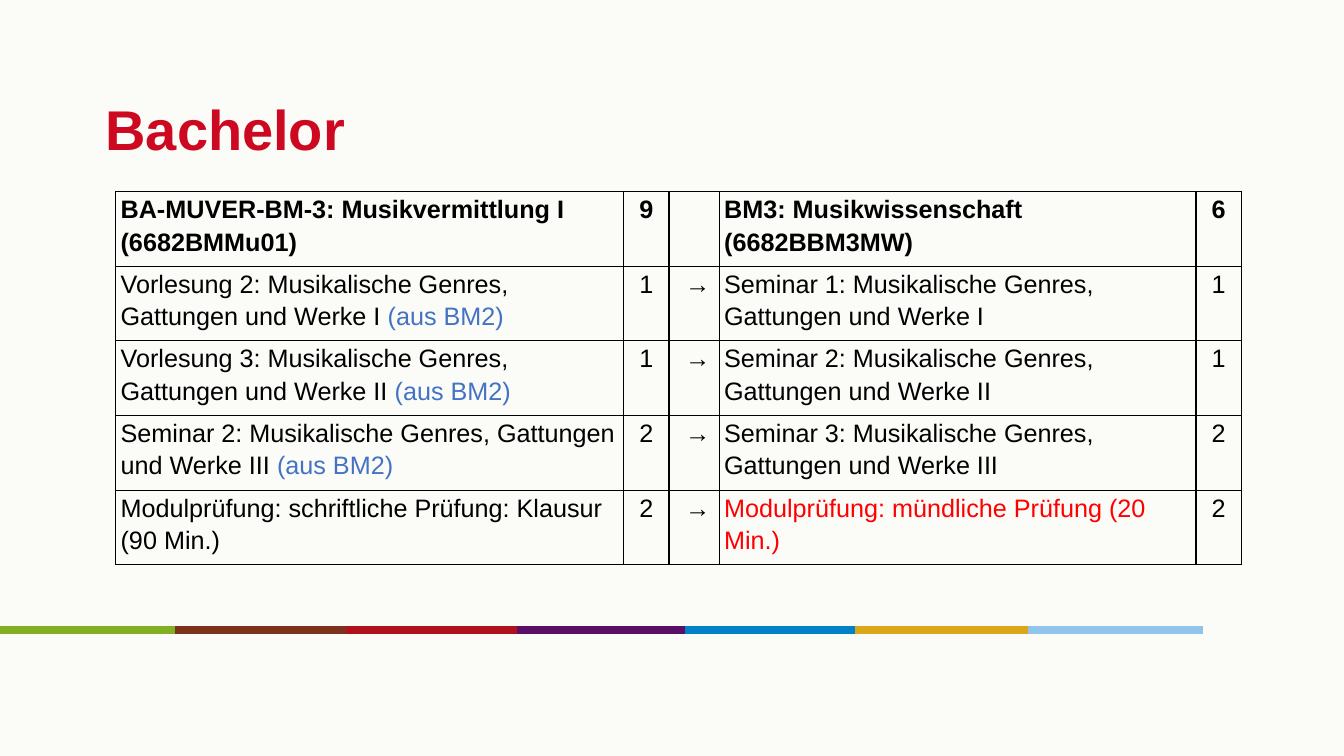
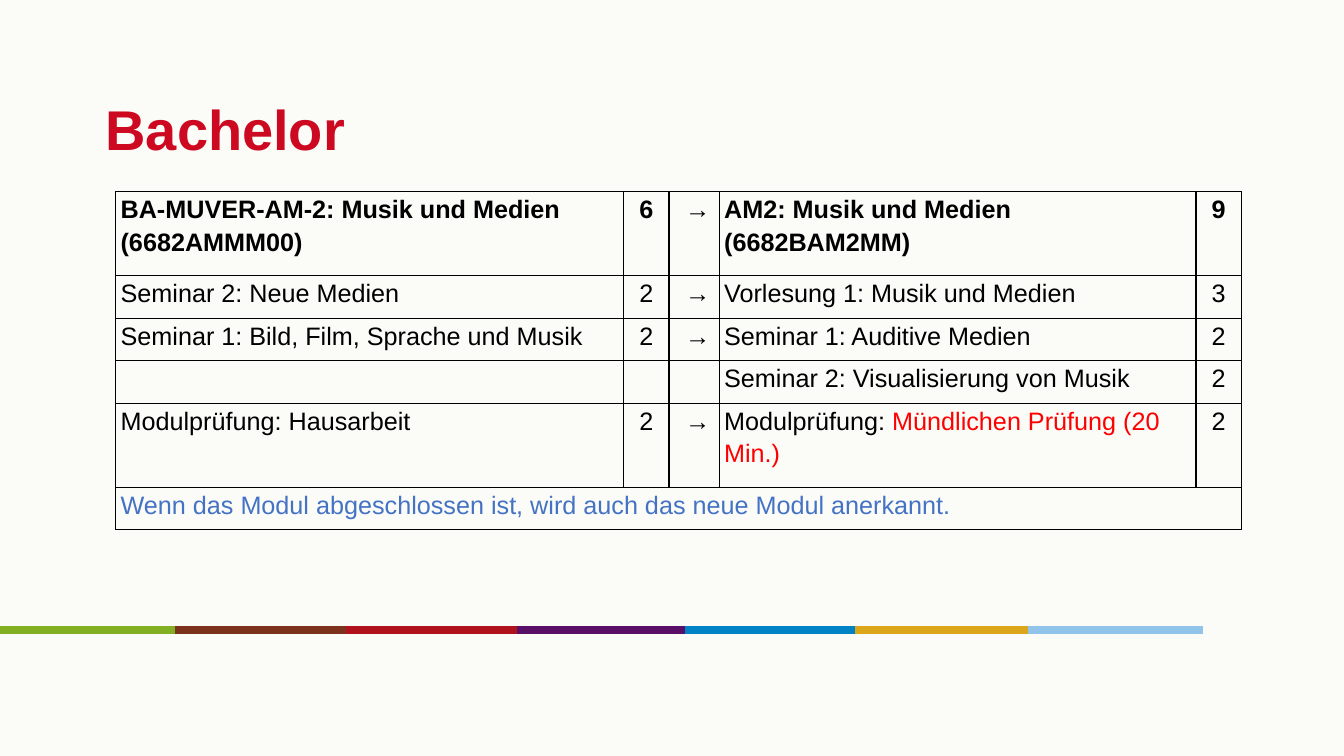
from dataclasses import dataclass
from typing import NamedTuple

from lxml import etree
from pptx import Presentation
from pptx.dml.color import RGBColor
from pptx.enum.shapes import MSO_CONNECTOR
from pptx.enum.text import MSO_ANCHOR, MSO_AUTO_SIZE, PP_ALIGN
from pptx.oxml.ns import qn
from pptx.util import Cm, Pt

LEFT, CENTER = PP_ALIGN.LEFT, PP_ALIGN.CENTER
MIDDLE = MSO_ANCHOR.MIDDLE
NO_FIT = MSO_AUTO_SIZE.NONE
STRAIGHT = MSO_CONNECTOR.STRAIGHT


@dataclass(frozen=True)
class Theme:
    font: str = "Arial"
    paper: str = "FBFCF8"
    title: str = "CD0921"
    ink: str = "000000"
    note: str = "4472C4"
    alert: str = "FF0000"
    title_size: float = 40
    body_size: float = 18
    band_size: float = 5.5
    rule_size: float = 1


THEME = Theme()


class Band(NamedTuple):
    left: float
    color: str


class Part(NamedTuple):
    text: str
    color: str = THEME.ink


class Row(NamedTuple):
    height: float
    old: tuple = ()
    old_points: str = ""
    arrow: str = ""
    new: tuple = ()
    new_points: str = ""
    bold: bool = False
    wide: bool = False


BANDS = [
    Band(0, "83AF23"), Band(4.42, "7D321D"), Band(8.71, "AF111D"),
    Band(13.03, "590F68"), Band(17.27, "0082C6"), Band(21.54, "DBA619"),
    Band(25.91, "91C4EA"),
]
BAND_WIDTH, BAND_TOP = 4.4, 15.88
COLUMNS = [12.8, 1.14, 1.27, 12.01, 1.14]
TABLE_LEFT, TABLE_TOP = 2.92, 4.83
INSET = 0.12
TWO, ONE, TALL = 1.88, 1.07, 2.12
ARROW = " →"
FROM_BM2 = Part("(aus BM2)", THEME.note)
GENRES = "Musikalische Genres, Gattungen und Werke"

BASIC = [
    Row(TWO, (Part("BA-MUVER-BM-3: Musikvermittlung I (6682BMMu01)"),), "9",
        "", (Part("BM3: Musikwissenschaft (6682BBM3MW)"),), "6", bold=True),
    Row(TWO, (Part(f"Vorlesung 2: {GENRES} I "), FROM_BM2), "1",
        ARROW, (Part(f"Seminar 1: {GENRES} I"),), "1"),
    Row(TWO, (Part(f"Vorlesung 3: {GENRES} II "), FROM_BM2), "1",
        ARROW, (Part(f"Seminar 2: {GENRES} II"),), "1"),
    Row(TWO, (Part(f"Seminar 2: {GENRES} III "), FROM_BM2), "2",
        ARROW, (Part(f"Seminar 3: {GENRES} III"),), "2"),
    Row(TWO, (Part("Modulprüfung: schriftliche Prüfung: Klausur (90 Min.)"),), "2",
        ARROW, (Part("Modulprüfung: mündliche Prüfung (20 Min.)", THEME.alert),), "2"),
]
MEDIA = [
    Row(TALL, (Part("BA-MUVER-AM-2: Musik und Medien (6682AMMM00)"),), "6",
        ARROW, (Part("AM2: Musik und Medien (6682BAM2MM)"),), "9", bold=True),
    Row(ONE, (Part("Seminar 2: Neue Medien"),), "2",
        ARROW, (Part("Vorlesung 1: Musik und Medien"),), "3"),
    Row(ONE, (Part("Seminar 1: Bild, Film, Sprache und Musik"),), "2",
        ARROW, (Part("Seminar 1: Auditive Medien"),), "2"),
    Row(ONE, new=(Part("Seminar 2: Visualisierung von Musik"),), new_points="2"),
    Row(TALL, (Part("Modulprüfung: Hausarbeit"),), "2", ARROW,
        (Part("Modulprüfung: "), Part("Mündlichen Prüfung (20 Min.)", THEME.alert)), "2"),
    Row(ONE, (Part("Wenn das Modul abgeschlossen ist, wird auch das neue Modul anerkannt.",
                   THEME.note),), wide=True),
]


def style(font, size: float, color: str, bold: bool) -> None:
    font.name = THEME.font
    font.size = Pt(size)
    font.bold = bold
    font.color.rgb = RGBColor.from_string(color)


def place_title(layout) -> None:
    """Set the title's place and frame on the shared layout."""
    title = layout.placeholders[0]
    title.left, title.top = Cm(2.54), Cm(1.65)
    title.width, title.height = Cm(28.78), Cm(3.18)
    frame = title.text_frame
    frame.vertical_anchor = MIDDLE
    frame.auto_size = NO_FIT
    frame.margin_left = frame.margin_right = Cm(INSET)
    frame.margin_top = frame.margin_bottom = Cm(INSET)


def add_bands(slide) -> None:
    for band in BANDS:
        line = slide.shapes.add_connector(
            STRAIGHT, Cm(band.left), Cm(BAND_TOP),
            Cm(band.left + BAND_WIDTH), Cm(BAND_TOP))
        line.line.color.rgb = RGBColor.from_string(band.color)
        line.line.width = Pt(THEME.band_size)
        etree.SubElement(line._element.spPr, qn("a:effectLst"))


def add_rules(cell) -> None:
    """Draw the four borders of a cell."""
    props = cell._tc.get_or_add_tcPr()
    for side in ("lnL", "lnR", "lnT", "lnB"):
        rule = etree.SubElement(props, qn(f"a:{side}"), w=str(Pt(THEME.rule_size)))
        fill = etree.SubElement(rule, qn("a:solidFill"))
        etree.SubElement(fill, qn("a:srgbClr"), val=THEME.ink)


def fill_cell(cell, parts: tuple, align, bold: bool) -> None:
    add_rules(cell)
    cell.fill.background()
    cell.margin_left = cell.margin_right = Cm(INSET)
    cell.margin_top = cell.margin_bottom = 0
    para = cell.text_frame.paragraphs[0]
    para.alignment = align
    para.line_spacing = 1.15
    para.space_after = Pt(10)
    style(para.font, THEME.body_size, THEME.ink, bold)
    for part in parts:
        run = para.add_run()
        run.text = part.text
        style(run.font, THEME.body_size, part.color, bold)


def add_grid(slide, rows: list[Row]) -> None:
    frame = slide.shapes.add_table(
        len(rows), len(COLUMNS), Cm(TABLE_LEFT), Cm(TABLE_TOP),
        Cm(sum(COLUMNS)), Cm(sum(row.height for row in rows)))
    table = frame.table
    table.first_row = table.horz_banding = False
    for column, width in zip(table.columns, COLUMNS):
        column.width = Cm(width)
    for i, row in enumerate(rows):
        table.rows[i].height = Cm(row.height)
        cells = [
            (row.old, LEFT, row.bold),
            (row.old_points, CENTER, row.bold),
            (row.arrow, CENTER, False),
            (row.new, LEFT, row.bold),
            (row.new_points, CENTER, row.bold),
        ]
        for j, (text, align, bold) in enumerate(cells):
            if isinstance(text, str):
                text = (Part(text),) if text else ()
            fill_cell(table.cell(i, j), text, align, bold)
        if row.wide:
            table.cell(i, 0).merge(table.cell(i, len(COLUMNS) - 1))


def add_page(deck, layout, title: str, rows: list[Row]) -> None:
    slide = deck.slides.add_slide(layout)
    add_bands(slide)
    frame = slide.shapes.title.text_frame
    frame.text = title
    para = frame.paragraphs[0]
    para.alignment = LEFT
    style(para.runs[0].font, THEME.title_size, THEME.title, True)
    add_grid(slide, rows)


def main() -> None:
    deck = Presentation()
    deck.slide_width, deck.slide_height = Cm(33.87), Cm(19.05)
    paper = deck.slide_master.background.fill
    paper.solid()
    paper.fore_color.rgb = RGBColor.from_string(THEME.paper)
    layout = deck.slide_layouts.get_by_name("Title Only")
    place_title(layout)
    for rows in (BASIC, MEDIA):
        add_page(deck, layout, "Bachelor", rows)
    deck.save("out.pptx")


if __name__ == "__main__":
    main()
